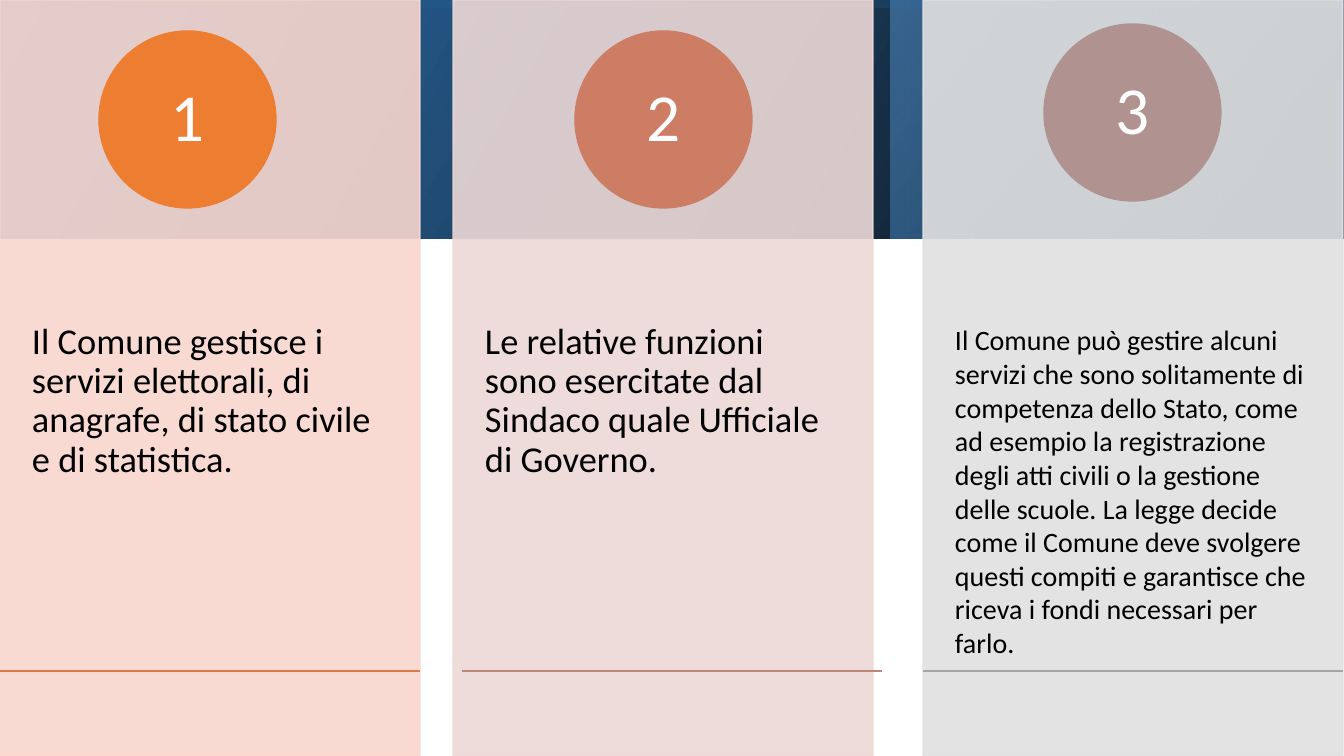
from lxml import etree
from pptx import Presentation
from pptx.dml.color import RGBColor
from pptx.enum.shapes import MSO_CONNECTOR, MSO_SHAPE
from pptx.enum.text import MSO_ANCHOR, PP_ALIGN
from pptx.oxml.ns import qn
from pptx.util import Pt

EMU_PER_PX = 914400 / 100.8
RECTANGLE = MSO_SHAPE.RECTANGLE
OVAL = MSO_SHAPE.OVAL
STRAIGHT = MSO_CONNECTOR.STRAIGHT
MIDDLE = MSO_ANCHOR.MIDDLE
CENTER = PP_ALIGN.CENTER

SLIDE_W, SLIDE_H = 1344, 756
BAND_H = 239
PANEL_W = 420
BODY_TOP, BODY_H = 287, 454
BADGE_SIZE = 177
RULE_Y = 671

BANDS = [
    ((0, 0, SLIDE_W, BAND_H), 0, 330, [(0, "000000", 96), (100, "2E75B6", 100)]),
    ((891, 0, 452, BAND_H), 0, 320, [(19, "1F4E79", 68), (100, "5B9BD5", 48)]),
    ((552, -552, BAND_H, SLIDE_W), 270, 350, [(23, "2E75B6", 16), (99, "000000", 45)]),
]

COLUMNS = [
    {"left": 0, "panel": "F8D7CE", "badge": "ED7D31", "badge_at": (99, 31),
     "rule": "DC7A4B", "rule_left": 0, "size": 26, "spacing": 0.9,
     "text": "Il Comune gestisce i servizi elettorali, di anagrafe, "
             "di stato civile e di statistica."},
    {"left": 453, "panel": "EDD9D7", "badge": "CC7D64", "badge_at": (575, 31),
     "rule": "BD867B", "rule_left": 462, "size": 26, "spacing": 0.9,
     "text": "Le relative funzioni sono esercitate dal Sindaco quale "
             "Ufficiale di Governo."},
    {"left": 923, "panel": "E1E1E1", "badge": "B09391", "badge_at": (1044, 24),
     "rule": "A5A5A5", "rule_left": 923, "size": 20, "spacing": 1.0,
     "text": "Il Comune può gestire alcuni servizi che sono solitamente di "
             "competenza dello Stato, come ad esempio la registrazione degli "
             "atti civili o la gestione delle scuole. La legge decide come il "
             "Comune deve svolgere questi compiti e garantisce che riceva i "
             "fondi necessari per farlo."},
]


def px(length):
    """Turn pixels into EMU."""
    return round(length * EMU_PER_PX)


def color(hex_code):
    """Turn a hex string into a colour."""
    return RGBColor.from_string(hex_code)


def set_alpha(element, percent):
    """Give every colour inside an element the same opacity."""
    for tint in element.iter(qn("a:srgbClr")):
        etree.SubElement(tint, qn("a:alpha"), val=str(percent * 1000))


def add_filled(slide, kind, box, hex_code):
    """Add a preset shape with a fill and outline of one colour."""
    shape = slide.shapes.add_shape(kind, *map(px, box))
    shape.shadow.inherit = False
    shape.fill.solid()
    shape.fill.fore_color.rgb = color(hex_code)
    shape.line.color.rgb = color(hex_code)
    shape.line.width = Pt(1)
    return shape


def add_band(slide, box, rotation, angle, stops):
    """Add a mirrored rectangle with a translucent linear gradient."""
    band = slide.shapes.add_shape(RECTANGLE, *map(px, box))
    band.shadow.inherit = False
    band.line.fill.background()
    band.rotation = rotation
    properties = band._element.spPr
    properties.find(qn("a:xfrm")).set("flipH", "1")
    band.fill.gradient()
    gradient = properties.find(qn("a:gradFill"))
    for child in list(gradient):
        gradient.remove(child)
    gradient.set("rotWithShape", "1")
    stop_list = etree.SubElement(gradient, qn("a:gsLst"))
    for position, hex_code, opacity in stops:
        stop = etree.SubElement(stop_list, qn("a:gs"), pos=str(position * 1000))
        etree.SubElement(stop, qn("a:srgbClr"), val=hex_code)
        set_alpha(stop, opacity)
    etree.SubElement(gradient, qn("a:lin"), ang=str(angle * 60000), scaled="0")


def write(frame, text, size, hex_code, spacing, margins):
    """Fill a text frame with one styled paragraph."""
    frame.word_wrap = True
    frame.margin_left = frame.margin_right = px(margins[0])
    frame.margin_top = frame.margin_bottom = px(margins[1])
    paragraph = frame.paragraphs[0]
    paragraph.text = text
    paragraph.line_spacing = spacing
    paragraph.font.name = "Calibri"
    paragraph.font.size = Pt(size)
    paragraph.font.color.rgb = color(hex_code)
    return paragraph


def add_body(slide, left, text, size, spacing):
    """Add the text of a column."""
    body = slide.shapes.add_textbox(*map(px, (left, BODY_TOP, PANEL_W, BODY_H)))
    write(body.text_frame, text, size, "000000", spacing, (32, 36))


def add_badge(slide, number, position, hex_code):
    """Add a numbered circle."""
    badge = add_filled(slide, OVAL, (*position, BADGE_SIZE, BADGE_SIZE), hex_code)
    badge.text_frame.vertical_anchor = MIDDLE
    paragraph = write(badge.text_frame, str(number), 48, "FFFFFF", 0.9, (14, 1))
    paragraph.alignment = CENTER


def add_rule(slide, left, hex_code):
    """Add the thin line at the foot of a column."""
    rule = slide.shapes.add_connector(
        STRAIGHT, *map(px, (left, RULE_Y, left + PANEL_W, RULE_Y)))
    rule.line.color.rgb = color(hex_code)
    rule.line.width = Pt(1)
    etree.SubElement(rule._element.spPr, qn("a:effectLst"))


def add_column(slide, number, column):
    """Add a panel with its text, number and foot line."""
    panel = add_filled(
        slide, RECTANGLE, (column["left"], 0, PANEL_W, SLIDE_H), column["panel"])
    set_alpha(panel._element.spPr, 90)
    add_body(slide, column["left"], column["text"], column["size"], column["spacing"])
    add_badge(slide, number, column["badge_at"], column["badge"])
    add_rule(slide, column["rule_left"], column["rule"])


def main():
    """Build the slide and save it."""
    deck = Presentation()
    deck.slide_width, deck.slide_height = px(SLIDE_W), px(SLIDE_H)
    slide = deck.slides.add_slide(deck.slide_layouts[6])
    for band in BANDS:
        add_band(slide, *band)
    for number, column in enumerate(COLUMNS, start=1):
        add_column(slide, number, column)
    deck.save("out.pptx")


if __name__ == "__main__":
    main()
